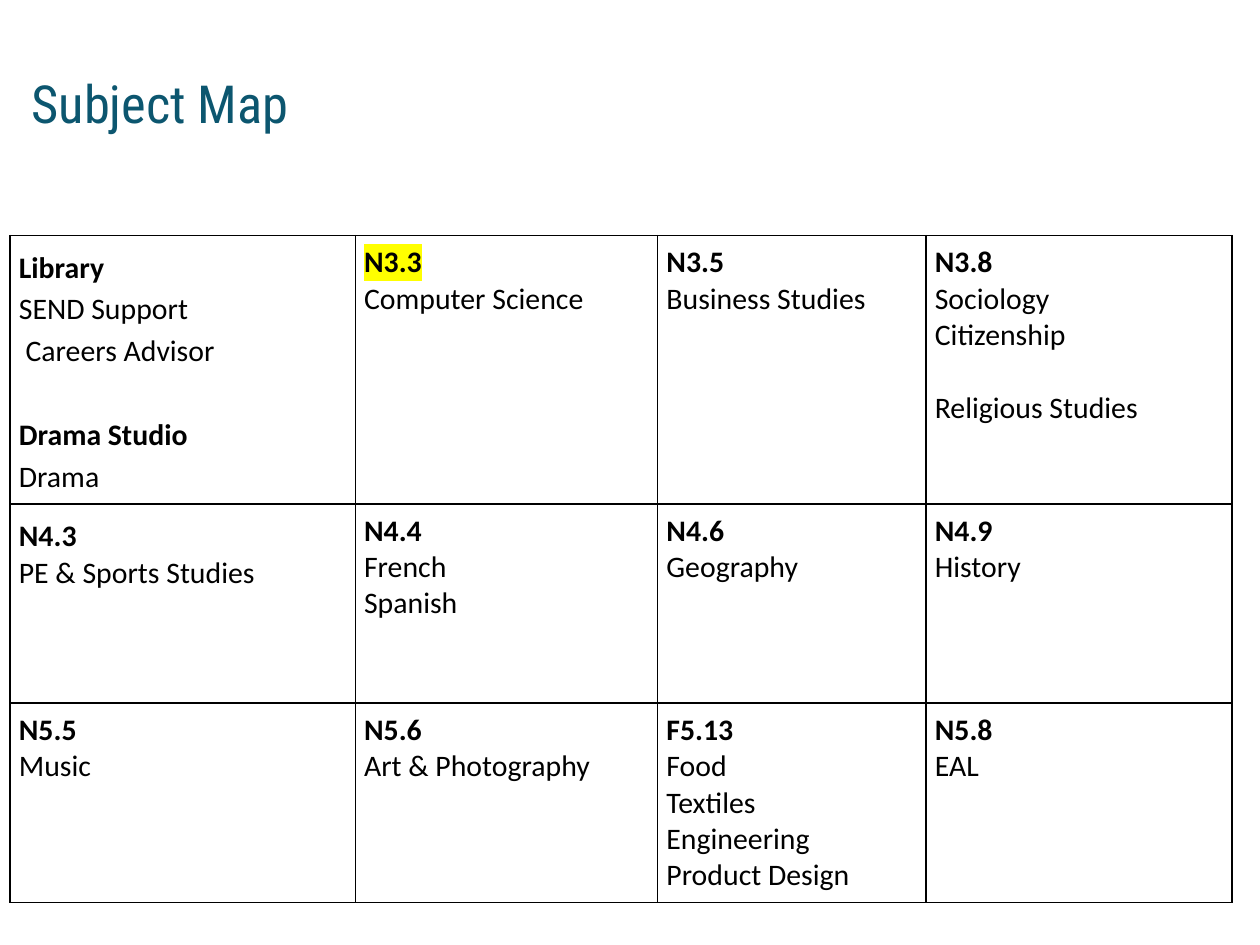
"""Build the Subject Map slide: a title above a grid of rooms and their subjects."""
from dataclasses import dataclass

from lxml import etree
from pptx import Presentation
from pptx.dml.color import RGBColor
from pptx.enum import text
from pptx.oxml import ns
from pptx.util import Inches, Pt

TEAL, BLACK, YELLOW = "0C566F", "000000", "FFFF00"
BODY_FONT, TITLE_FONT = "Calibri", "Roboto Condensed"
COLUMN_WIDTHS = (2.74, 2.4, 2.13, 2.43)
ROW_HEIGHTS = (2.12, 1.58, 1.58)
CELL_MARGIN = 0.07


@dataclass
class Line:
    """One line of text in a room cell."""
    wording: str
    bold: bool = False
    spacing: float = 1.0
    before: float = 0
    highlight: str = ""


def room(name: str, *subjects: str, highlight: str = "") -> list[Line]:
    """Return a bold room name followed by its subjects."""
    return [Line(name, bold=True, highlight=highlight), *map(Line, subjects)]


LIBRARY = [
    Line("Library", bold=True, spacing=1.15),
    Line("SEND Support", spacing=1.15),
    Line(" Careers Advisor", spacing=1.15),
    Line("Drama Studio", bold=True, spacing=1.15, before=24),
    Line("Drama", spacing=1.15),
]
HUMANITIES = [
    *room("N3.8", "Sociology", "Citizenship"),
    Line("Religious Studies", before=20.75),
]
SPORTS = [Line("N4.3", bold=True, spacing=1.15), Line("PE & Sports Studies")]

ROOMS = [
    [LIBRARY, room("N3.3", "Computer Science", highlight=YELLOW),
     room("N3.5", "Business Studies"), HUMANITIES],
    [SPORTS, room("N4.4", "French", "Spanish"),
     room("N4.6", "Geography"), room("N4.9", "History")],
    [room("N5.5", "Music"), room("N5.6", "Art & Photography"),
     room("F5.13", "Food", "Textiles", "Engineering", "Product Design"),
     room("N5.8", "EAL")],
]


def style_font(font, name: str, size: float, color: str, bold: bool = False) -> None:
    """Set typeface, size, colour and weight."""
    font.size, font.bold = Pt(size), bold
    font.color.rgb = RGBColor.from_string(color)
    font.name = name


def highlight_span(span, color: str) -> None:
    """Mark a run with a background colour."""
    mark = etree.Element(ns.qn("a:highlight"))
    etree.SubElement(mark, ns.qn("a:srgbClr"), val=color)
    span.font._element.find(ns.qn("a:solidFill")).addnext(mark)


def add_borders(cell, color: str, width: float) -> None:
    """Outline all four sides of a cell."""
    properties = cell._tc.get_or_add_tcPr()
    for index, side in enumerate(("lnL", "lnR", "lnT", "lnB")):
        border = etree.Element(ns.qn(f"a:{side}"), w=str(Pt(width)))
        fill = etree.SubElement(border, ns.qn("a:solidFill"))
        etree.SubElement(fill, ns.qn("a:srgbClr"), val=color)
        properties.insert(index, border)


def fill_cell(cell, lines: list[Line]) -> None:
    """Write and format the lines of one room cell."""
    cell.margin_left = cell.margin_right = Inches(CELL_MARGIN)
    cell.margin_top = cell.margin_bottom = Inches(CELL_MARGIN)
    cell.fill.background()
    add_borders(cell, BLACK, 1)
    cell.text_frame.text = "\n".join(line.wording for line in lines)
    for para, line in zip(cell.text_frame.paragraphs, lines):
        para.line_spacing = line.spacing
        para.space_before = Pt(line.before)
        span = para.runs[0]
        style_font(span.font, BODY_FONT, 17, BLACK, line.bold)
        if line.highlight:
            highlight_span(span, line.highlight)


def add_title(page, wording: str) -> None:
    """Place and format the slide title."""
    title = page.shapes.title
    title.left, title.top = Inches(0.15), Inches(0.49)
    title.width, title.height = Inches(5.75), Inches(0.64)
    frame = title.text_frame
    frame.text = wording
    frame.auto_size = text.MSO_AUTO_SIZE.NONE
    frame.vertical_anchor = text.MSO_ANCHOR.MIDDLE
    para = frame.paragraphs[0]
    para.alignment = text.PP_ALIGN.LEFT
    style_font(para.runs[0].font, TITLE_FONT, 30, TEAL)


def add_room_table(page) -> None:
    """Draw the grid of rooms."""
    table = page.shapes.add_table(
        len(ROW_HEIGHTS), len(COLUMN_WIDTHS), Inches(0.08), Inches(1.87),
        Inches(sum(COLUMN_WIDTHS)), Inches(sum(ROW_HEIGHTS))).table
    table.first_row = table.horz_banding = False
    for column, width in zip(table.columns, COLUMN_WIDTHS):
        column.width = Inches(width)
    for row, height, rooms in zip(table.rows, ROW_HEIGHTS, ROOMS):
        row.height = Inches(height)
        for cell, lines in zip(row.cells, rooms):
            fill_cell(cell, lines)


def main() -> None:
    """Create and save the deck."""
    deck = Presentation()
    deck.slide_width, deck.slide_height = Inches(10), Inches(7.5)
    page = deck.slides.add_slide(deck.slide_layouts[5])
    add_title(page, "Subject Map")
    add_room_table(page)
    deck.save("out.pptx")


if __name__ == "__main__":
    main()
